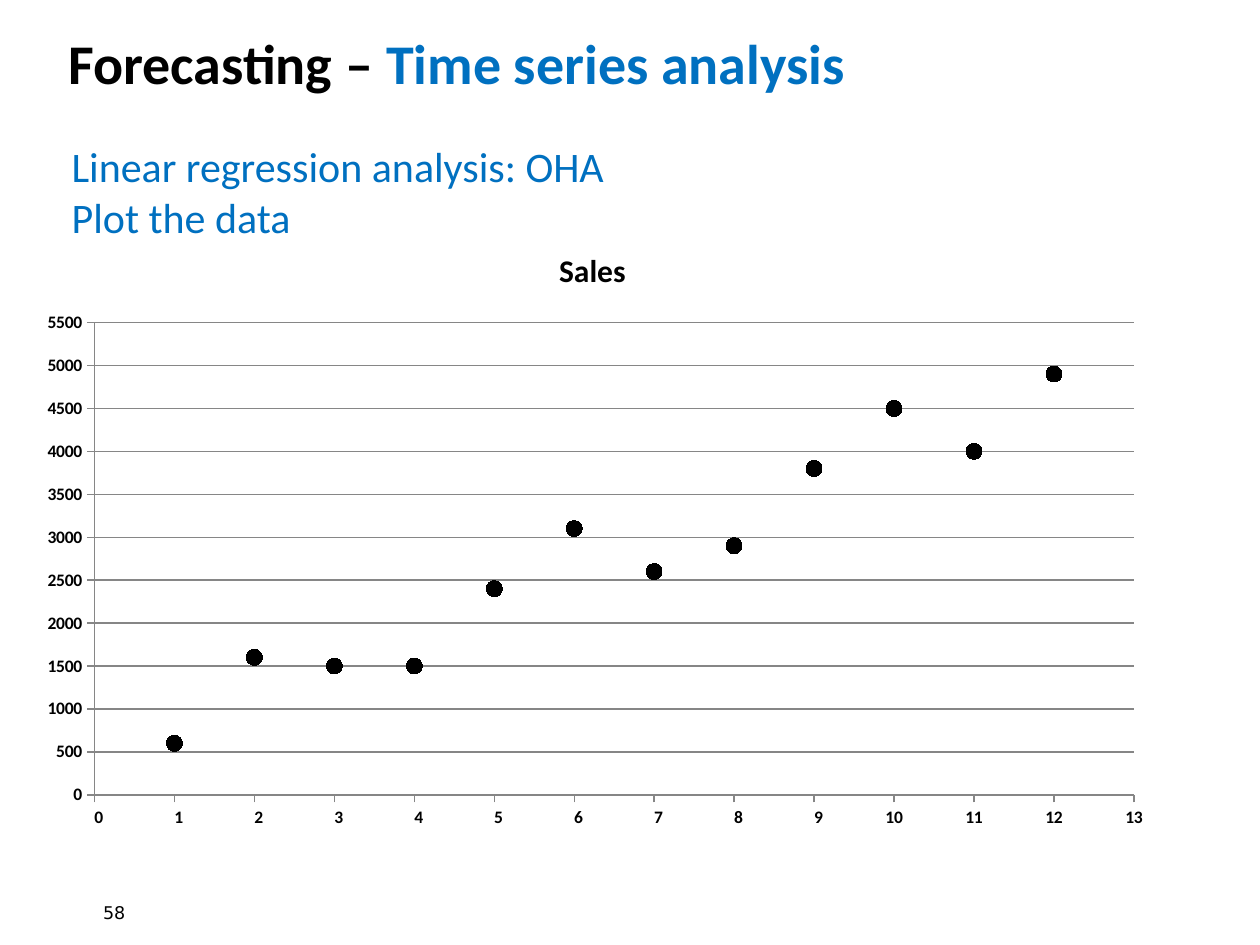
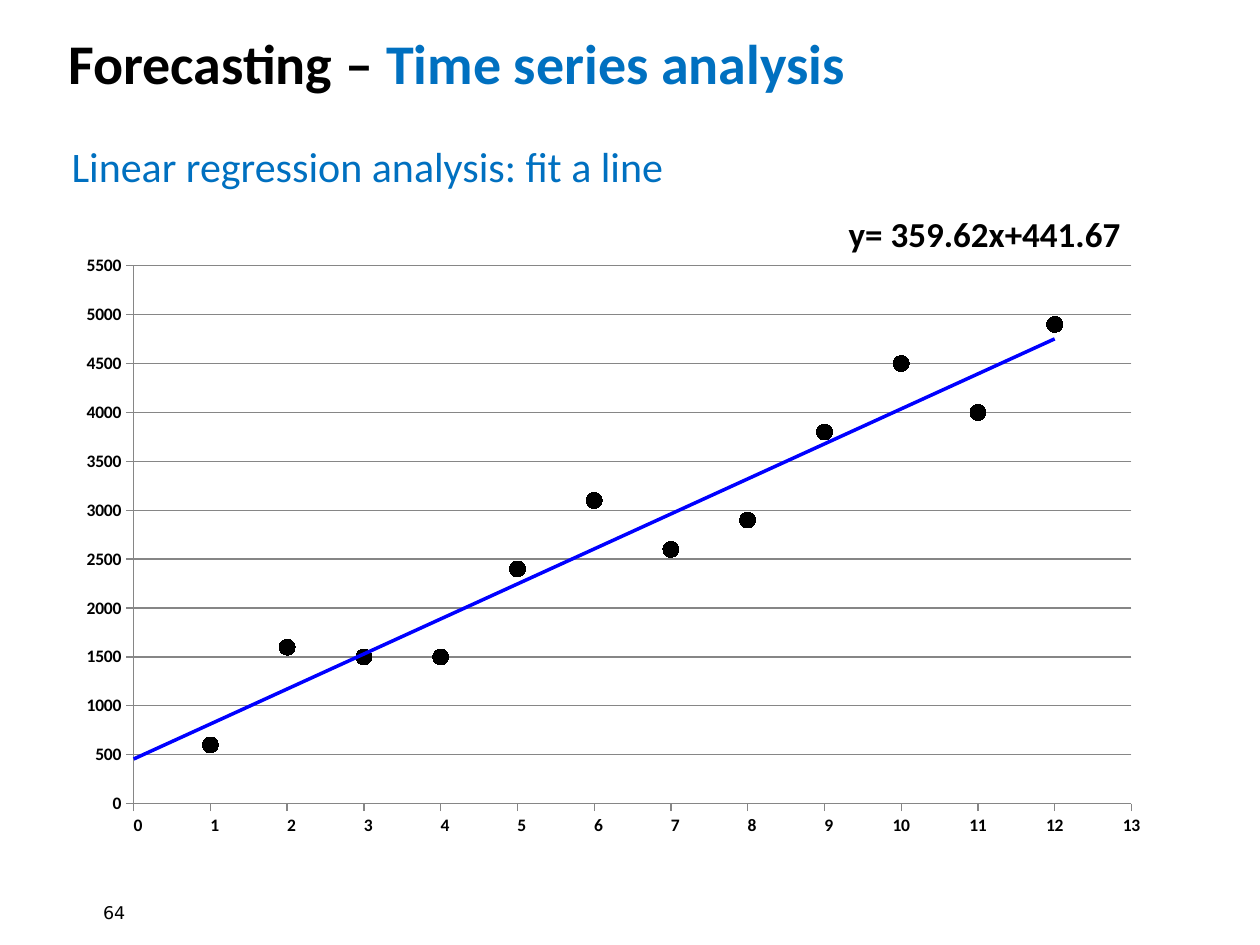
from pptx import Presentation
from pptx.chart.data import XyChartData
from pptx.dml.color import RGBColor
from pptx.enum.chart import XL_CHART_TYPE, XL_MARKER_STYLE, XL_TICK_MARK
from pptx.enum.text import MSO_ANCHOR, MSO_AUTO_SIZE, PP_ALIGN
from pptx.oxml import parse_xml
from pptx.oxml.ns import nsdecls, qn
from pptx.util import Inches, Pt

SCATTER = XL_CHART_TYPE.XY_SCATTER
CIRCLE = XL_MARKER_STYLE.CIRCLE
TICK_OUTSIDE, TICK_NONE = XL_TICK_MARK.OUTSIDE, XL_TICK_MARK.NONE
TOP, MIDDLE = MSO_ANCHOR.TOP, MSO_ANCHOR.MIDDLE
LEFT, CENTER = PP_ALIGN.LEFT, PP_ALIGN.CENTER
NO_AUTOFIT = MSO_AUTO_SIZE.NONE

BLACK = RGBColor(0x00, 0x00, 0x00)
BLUE = RGBColor(0x00, 0x70, 0xC0)
GRID_GRAY = RGBColor(0x86, 0x86, 0x86)
TREND_BLUE = RGBColor(0x00, 0x00, 0xFF)
FONT = "Calibri"
NUMBER_FONT = "DejaVu Sans"

SLIDE_WIDTH, SLIDE_HEIGHT = 10, 7.5
TITLE_ONLY_LAYOUT = 5
TITLE_PARTS = [("Forecasting – ", BLACK), ("Time series analysis", BLUE)]
SALES = [600, 1600, 1500, 1500, 2400, 3100, 2600, 2900, 3800, 4500, 4000, 4900]


def place(shape, box):
    shape.left, shape.top, shape.width, shape.height = map(Inches, box)


def format_font(font, size, color=BLACK, bold=False, name=FONT):
    font.name = name
    font.size = Pt(size)
    font.bold = bold
    font.color.rgb = color


def write_text(shape, lines, size, bold=False, name=FONT, anchor=TOP,
               align=LEFT, wrap=False):
    """Fill a shape with lines, each a list of (text, colour) runs."""
    frame = shape.text_frame
    frame.auto_size = NO_AUTOFIT
    frame.word_wrap = wrap
    frame.vertical_anchor = anchor
    for index, runs in enumerate(lines):
        paragraph = frame.add_paragraph() if index else frame.paragraphs[0]
        paragraph.alignment = align
        for text, color in runs:
            run = paragraph.add_run()
            run.text = text
            format_font(run.font, size, color, bold, name)


def add_text(slide, box, lines, size, **text_format):
    shape = slide.shapes.add_textbox(*map(Inches, box))
    write_text(shape, lines, size, **text_format)


def add_analysis_slide(presentation, subtitle_lines, number):
    """Add a slide with the shared title, a blue subtitle and its number."""
    slide = presentation.slides.add_slide(
        presentation.slide_layouts[TITLE_ONLY_LAYOUT])
    title = slide.shapes.title
    place(title, (0.44, 0.18, 7.59, 0.64))
    write_text(title, [TITLE_PARTS], 32, bold=True)
    subtitle_height = 0.1 + 0.4 * len(subtitle_lines)
    add_text(slide, (0.47, 1.07, 5.56, subtitle_height),
             [[(line, BLUE)] for line in subtitle_lines], 24)
    add_text(slide, (0.72, 6.98, 0.7, 0.52), [[(number, BLACK)]], 10,
             name=NUMBER_FONT, anchor=MIDDLE, wrap=True)
    return slide


def format_axis(axis, maximum, step, number_format):
    axis.minimum_scale, axis.maximum_scale = 0, maximum
    axis.major_unit = step
    axis.major_tick_mark = TICK_OUTSIDE
    axis.minor_tick_mark = TICK_NONE
    axis.tick_labels.number_format = number_format
    axis.tick_labels.number_format_is_linked = False
    format_font(axis.tick_labels.font, 10, bold=True)
    format_line(axis.format.line)


def format_line(line):
    line.color.rgb = GRID_GRAY
    line.width = Pt(0.75)


def set_plot_area(chart, chart_box, plot_box):
    """Fix the inner plot area; both boxes are in inches on the slide."""
    left, top, width, height = chart_box
    plot_left, plot_top, plot_width, plot_height = plot_box
    shares = {"x": (plot_left - left) / width, "y": (plot_top - top) / height,
              "w": plot_width / width, "h": plot_height / height}
    share_tags = "".join(f'<c:{tag} val="{share:.4f}"/>'
                         for tag, share in shares.items())
    plot_area = chart._chartSpace.chart.plotArea
    for layout in plot_area.findall(qn("c:layout")):
        plot_area.remove(layout)
    plot_area.insert(0, parse_xml(
        f'<c:layout {nsdecls("c")}><c:manualLayout>'
        '<c:layoutTarget val="inner"/><c:xMode val="edge"/><c:yMode val="edge"/>'
        f'{share_tags}</c:manualLayout></c:layout>'))


def add_trend_line(series):
    """Add a linear fit that reaches back to the value axis."""
    trend_line = parse_xml(
        f'<c:trendline {nsdecls("c", "a")}><c:spPr><a:ln w="{Pt(2)}"><a:solidFill>'
        f'<a:srgbClr val="{TREND_BLUE}"/></a:solidFill></a:ln></c:spPr>'
        '<c:trendlineType val="linear"/><c:backward val="1"/>'
        '<c:dispRSqr val="0"/><c:dispEq val="0"/></c:trendline>')
    series._element.find(qn("c:xVal")).addprevious(trend_line)


def add_sales_chart(slide, box, plot_box, title=None, trend=False):
    data = XyChartData()
    points = data.add_series("Series 1")
    for month, sales in enumerate(SALES, start=1):
        points.add_data_point(month, sales)
    chart = slide.shapes.add_chart(SCATTER, *map(Inches, box), data).chart
    format_font(chart.font, 10)
    chart.has_legend = False
    chart.has_title = title is not None
    if title:
        paragraph = chart.chart_title.text_frame.paragraphs[0]
        run = paragraph.add_run()
        run.text = title
        format_font(run.font, 18, bold=True)
    set_plot_area(chart, box, plot_box)

    format_axis(chart.category_axis, 13, 1, "?0")
    format_axis(chart.value_axis, 5500, 500, "General")
    chart.category_axis.has_major_gridlines = False
    chart.value_axis.has_major_gridlines = True
    format_line(chart.value_axis.major_gridlines.format.line)

    chart.plots[0].vary_by_categories = False
    series = chart.plots[0].series[0]
    series.smooth = False
    series.format.line.fill.background()
    series.marker.style = CIRCLE
    series.marker.size = 9
    series.marker.format.fill.solid()
    series.marker.format.fill.fore_color.rgb = BLACK
    series.marker.format.line.color.rgb = BLACK
    if trend:
        add_trend_line(series)


def main():
    presentation = Presentation()
    presentation.slide_width = Inches(SLIDE_WIDTH)
    presentation.slide_height = Inches(SLIDE_HEIGHT)

    plot_slide = add_analysis_slide(
        presentation, ["Linear regression analysis: OHA", "Plot the data"], "58")
    add_sales_chart(plot_slide, (0.2, 1.78, 9.06, 4.88),
                    (0.75, 2.56, 8.25, 3.75), title="Sales ")

    fit_slide = add_analysis_slide(
        presentation, ["Linear regression analysis: fit a line"], "64")
    add_sales_chart(fit_slide, (0.47, 1.9, 8.67, 4.75),
                    (1.06, 2.11, 7.92, 4.27), trend=True)
    add_text(fit_slide, (6.42, 1.58, 2.79, 0.55),
             [[("y= 359.62x+441.67", BLACK)]], 20, bold=True,
             anchor=MIDDLE, align=CENTER, wrap=True)

    presentation.save("out.pptx")


if __name__ == "__main__":
    main()
